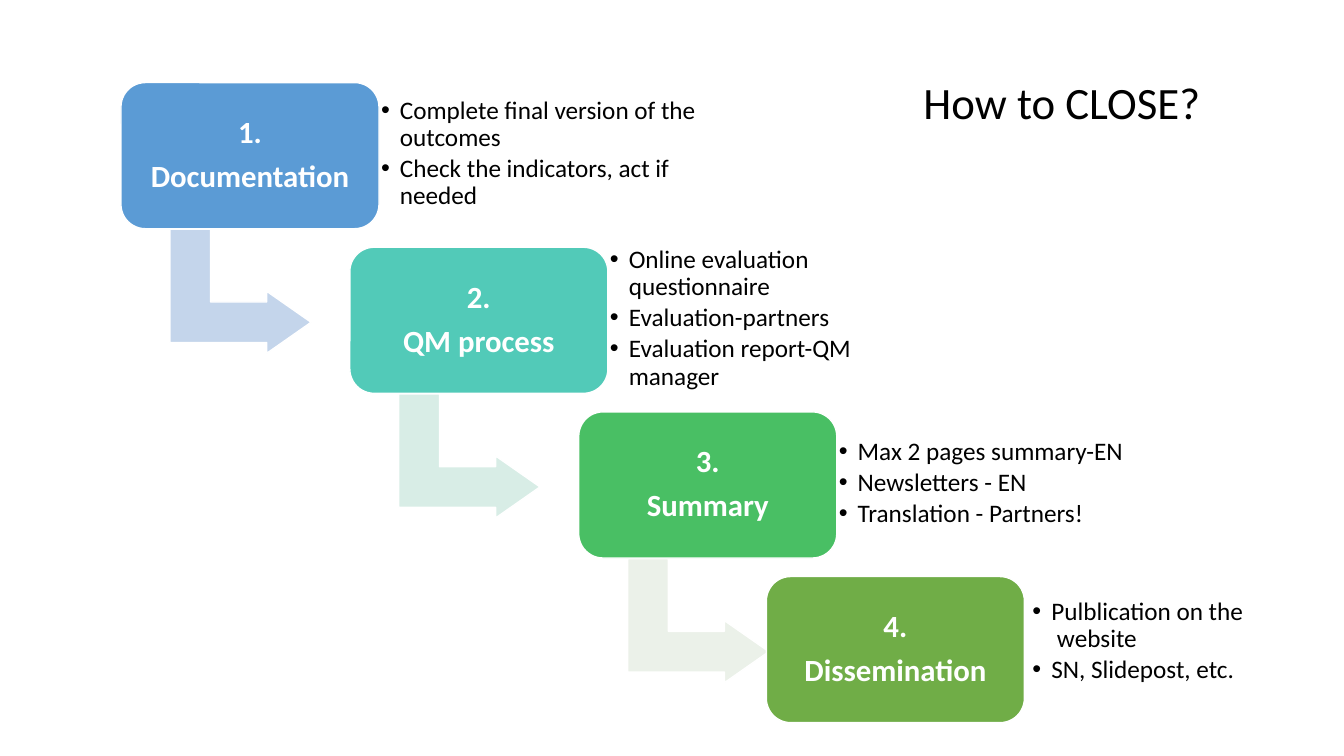
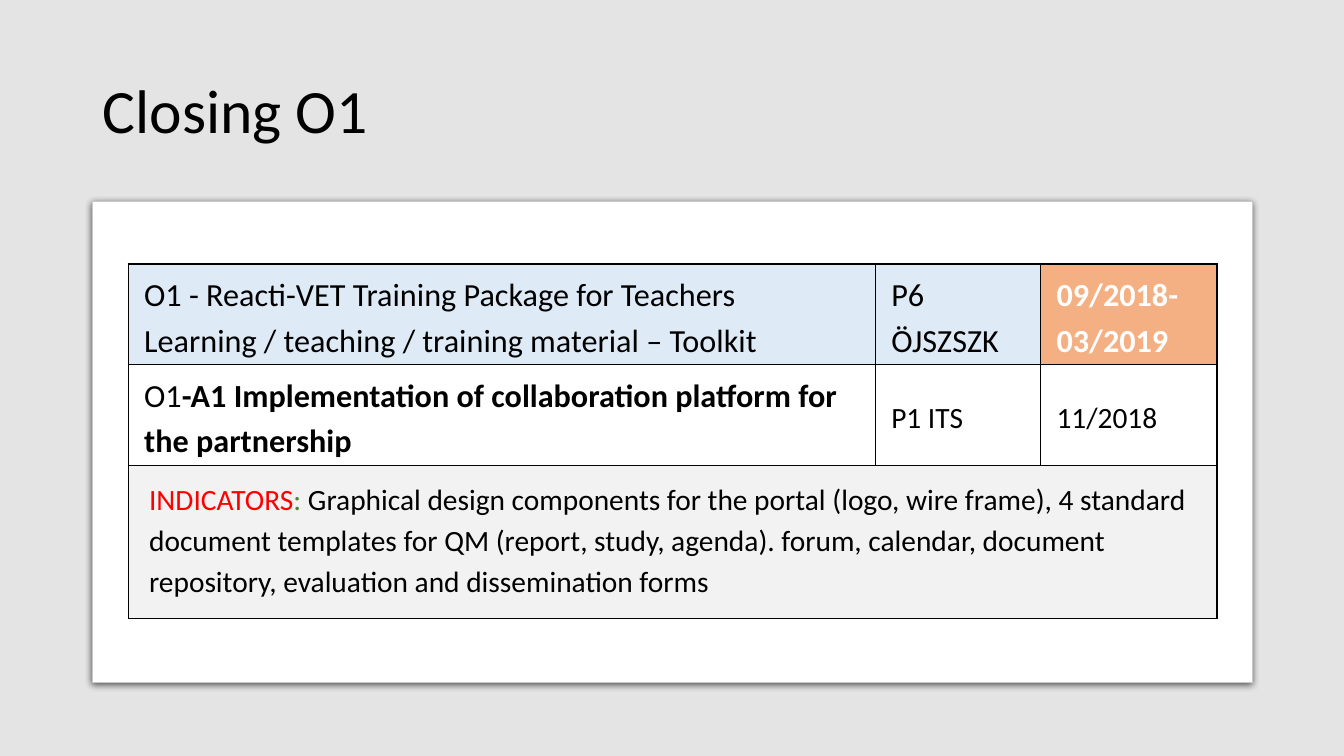
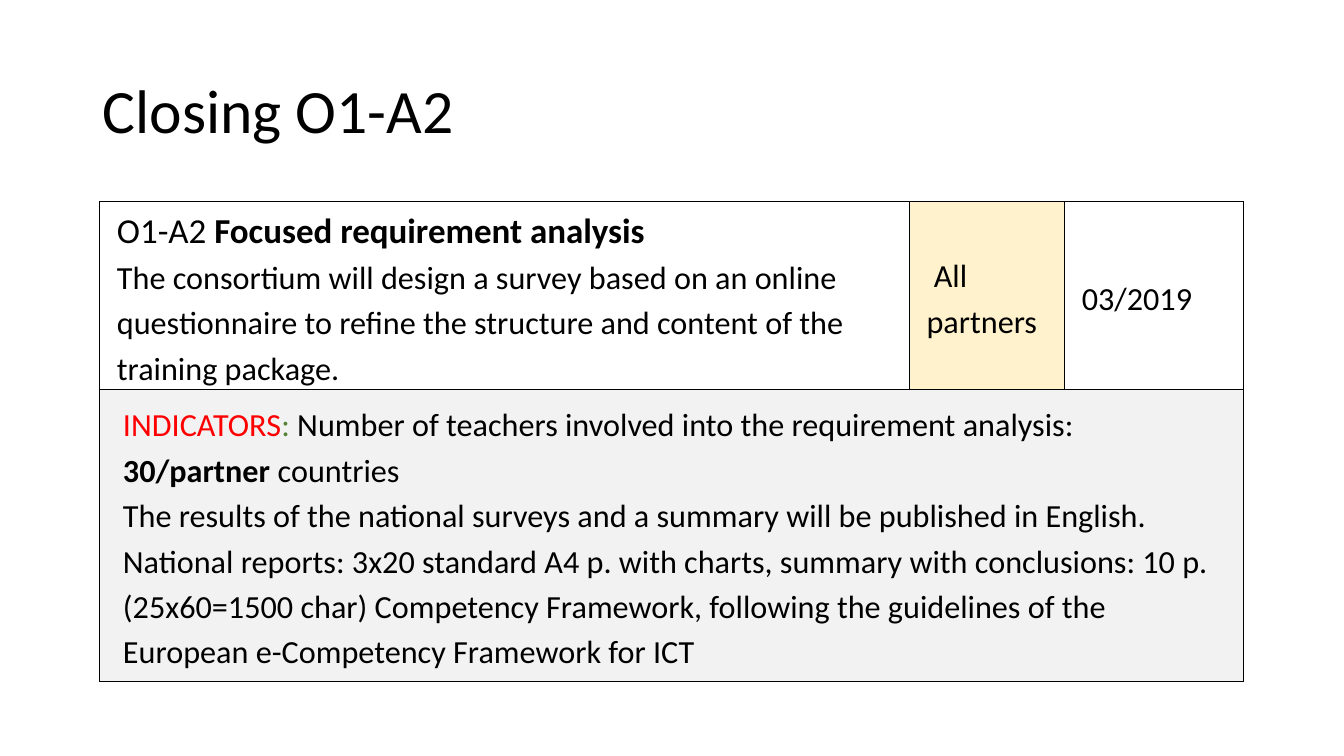
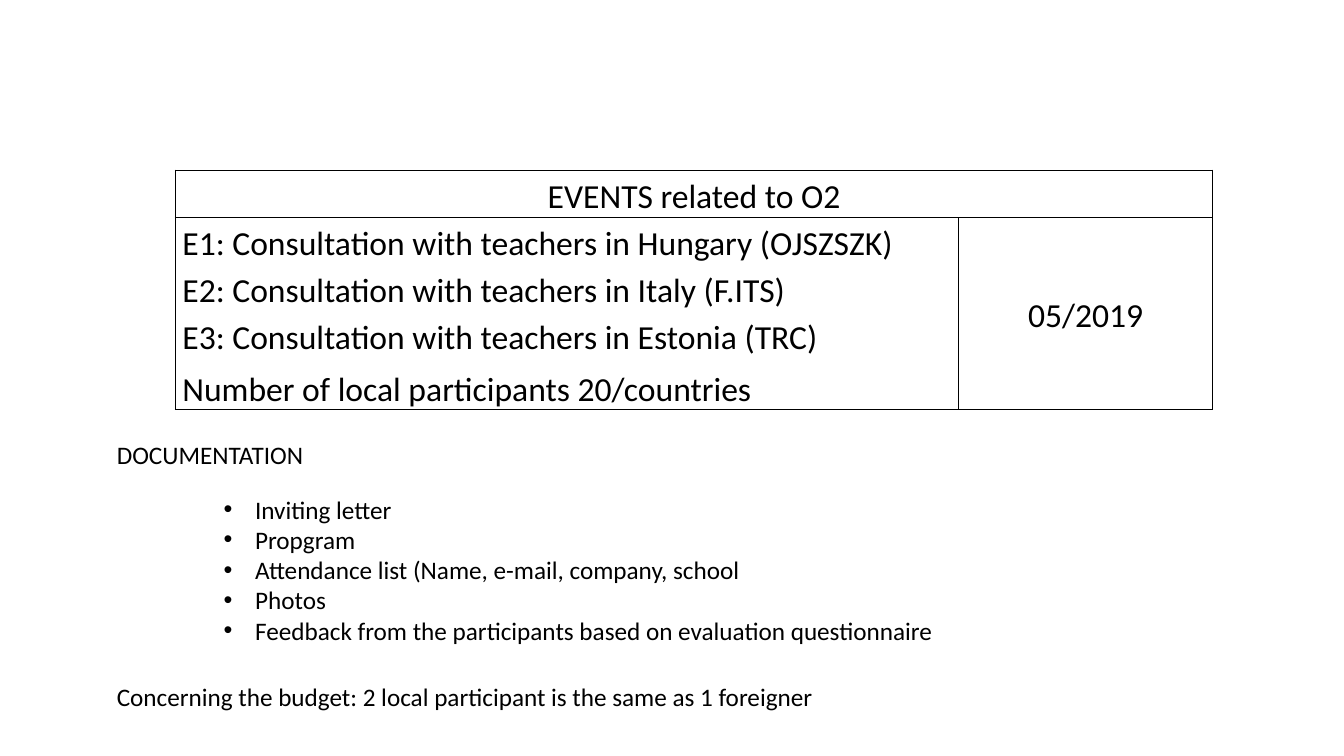
"""Build four slides on closing the project outcomes."""
from dataclasses import dataclass
from typing import NamedTuple

from lxml.etree import SubElement
from pptx import Presentation
from pptx.dml.color import RGBColor
from pptx.enum.shapes import MSO_SHAPE
from pptx.enum.text import MSO_ANCHOR, MSO_AUTO_SIZE, PP_ALIGN
from pptx.oxml.ns import qn
from pptx.util import Inches, Pt

FONT = "Calibri"
BLACK, WHITE, RED, GREEN = "000000", "FFFFFF", "FF0000", "538135"
BACKDROP, CARD_EDGE, PALE_GREY = "D9D9D9", "C8CACA", "F2F2F2"
PALE_BLUE, ORANGE, PALE_YELLOW = "DEEAF6", "F4B083", "FFF2CC"
WIDTH, HEIGHT = Inches(13.33), Inches(7.5)
TEXT_INSETS = (7.2, 3.6, 7.2, 3.6)


class Box(NamedTuple):
    """Left, top, width and height as percent of the slide."""
    x: float
    y: float
    w: float
    h: float


class Run(NamedTuple):
    """Piece of text with its own format."""
    text: str
    color: str | None = None
    bold: bool | None = None
    size: float | None = None


class Para(NamedTuple):
    """Paragraph of runs and its space after in points."""
    runs: tuple[Run, ...]
    after: float = 0


@dataclass
class Step:
    """Stage of the closing process with its notes."""
    name: str
    notes: tuple[str, ...]
    color: str
    x: float
    note: Box
    arrow: str | None = None


@dataclass
class Cell:
    """Table cell with its text and format."""
    paras: tuple[Para, ...]
    size: float
    insets: tuple[float, ...]
    fill: str | None = None
    anchor: MSO_ANCHOR = MSO_ANCHOR.MIDDLE
    align: PP_ALIGN | None = None
    span: int = 1


def rgb(color: str) -> RGBColor:
    """Turn a hex string into a colour."""
    return RGBColor.from_string(color)


def across(share: float) -> int:
    """Turn percent of the slide width into a length."""
    return round(WIDTH * share / 100)


def down(share: float) -> int:
    """Turn percent of the slide height into a length."""
    return round(HEIGHT * share / 100)


def place(box: Box) -> tuple[int, int, int, int]:
    """Turn a box of shares into lengths."""
    return across(box.x), down(box.y), across(box.w), down(box.h)


def plain(*texts: str, after: float = 0) -> tuple[Para, ...]:
    """Make one paragraph from each text."""
    return tuple(Para((Run(text),), after) for text in texts)


def add_bullet(p, indent: float) -> None:
    """Give a paragraph a round bullet with a hanging indent."""
    pPr = p._p.get_or_add_pPr()
    pPr.set("marL", str(Pt(indent)))
    pPr.set("indent", str(-Pt(indent)))
    SubElement(pPr, qn("a:buFont"), typeface="Arial")
    SubElement(pPr, qn("a:buChar"), char="•")


def add_run(p, text: str, *, size: float, color: str, bold: bool) -> None:
    """Add a formatted run, with line breaks at newlines."""
    for i, line in enumerate(text.split("\n")):
        if i:
            p.add_line_break()
        r = p.add_run()
        r.text = line
        r.font.name, r.font.size, r.font.bold = FONT, Pt(size), bold
        r.font.color.rgb = rgb(color)


def write(tf, paras: tuple[Para, ...], *, size: float, color: str = BLACK,
          bold: bool = False, spacing: float = 1.0, indent: float = 0,
          align: PP_ALIGN | None = None) -> None:
    """Fill a text frame with formatted paragraphs."""
    for i, para in enumerate(paras):
        p = tf.add_paragraph() if i else tf.paragraphs[0]
        if indent:
            add_bullet(p, indent)
        p.alignment, p.line_spacing = align or PP_ALIGN.LEFT, spacing
        p.space_before, p.space_after = Pt(0), Pt(para.after)
        for run in para.runs:
            add_run(p, run.text, size=run.size or size, color=run.color or color,
                    bold=bold if run.bold is None else run.bold)


def set_insets(target, insets: tuple[float, ...]) -> None:
    """Set left, top, right and bottom margins in points."""
    (target.margin_left, target.margin_top,
     target.margin_right, target.margin_bottom) = map(Pt, insets)


def add_text(s, box: Box, paras: tuple[Para, ...], *, wrap: bool = True,
             anchor: MSO_ANCHOR = MSO_ANCHOR.TOP,
             insets: tuple[float, ...] = TEXT_INSETS, **style) -> None:
    """Add a text box, which grows with its text when unwrapped."""
    tf = s.shapes.add_textbox(*place(box)).text_frame
    tf.word_wrap, tf.vertical_anchor = wrap, anchor
    if not wrap:
        tf.auto_size = MSO_AUTO_SIZE.SHAPE_TO_FIT_TEXT
    set_insets(tf, insets)
    write(tf, paras, **style)


def add_title(s, text: str) -> None:
    """Add the slide title."""
    add_text(s, Box(6.9, 5.33, 86.27, 19.33), plain(text, after=6), size=44,
             spacing=0.9, anchor=MSO_ANCHOR.MIDDLE)


def add_shape(s, kind: MSO_SHAPE, box: Box, fill: str, *,
              line: str | None = None, width: float = 1,
              adjust: tuple[float, ...] = ()):
    """Add a flat preset shape."""
    sp = s.shapes.add_shape(kind, *place(box))
    sp.shadow.inherit = False
    sp.fill.solid()
    sp.fill.fore_color.rgb = rgb(fill)
    if line:
        sp.line.color.rgb, sp.line.width = rgb(line), Pt(width)
    else:
        sp.line.fill.background()
    for i, value in enumerate(adjust):
        sp.adjustments[i] = value
    return sp


def set_alpha(clr, percent: int) -> None:
    """Set the opacity of a colour element."""
    SubElement(clr, qn("a:alpha"), val=str(percent * 1000))


def add_shadow(sp) -> None:
    """Give a shape a soft shadow below."""
    effects = sp._element.spPr.find(qn("a:effectLst"))
    shadow = SubElement(effects, qn("a:outerShdw"), blurRad=str(Pt(4.5)),
                        dist=str(Pt(1.5)), dir="5400000", rotWithShape="0")
    set_alpha(SubElement(shadow, qn("a:srgbClr"), val=BLACK), 63)


def add_borders(cell) -> None:
    """Draw a thin black line on every side of a cell."""
    tcPr = cell._tc.get_or_add_tcPr()
    for side in "LRTB":
        ln = SubElement(tcPr, qn(f"a:ln{side}"), w=str(Pt(1)))
        SubElement(SubElement(ln, qn("a:solidFill")), qn("a:srgbClr"), val=BLACK)


def add_table(s, x: float, y: float, cols: tuple[float, ...],
              rows: tuple[float, ...], cells: list[list[Cell]]) -> None:
    """Add a bordered table."""
    box = Box(x, y, sum(cols), sum(rows))
    table = s.shapes.add_table(len(rows), len(cols), *place(box)).table
    table.first_row = table.horz_banding = False
    for col, share in zip(table.columns, cols):
        col.width = across(share)
    for row, share in zip(table.rows, rows):
        row.height = down(share)
    for cell in table.iter_cells():
        add_borders(cell)
        cell.fill.background()
    for i, line in enumerate(cells):
        for j, item in enumerate(line):
            cell = table.cell(i, j)
            if item.span > 1:
                cell.merge(table.cell(i, j + item.span - 1))
            if item.fill:
                cell.fill.solid()
                cell.fill.fore_color.rgb = rgb(item.fill)
            cell.vertical_anchor = item.anchor
            set_insets(cell, item.insets)
            write(cell.text_frame, item.paras, size=item.size, spacing=1.15,
                  align=item.align)


def add_step(s, number: int, step: Step) -> None:
    """Draw a stage, its arrow to the next one and its notes."""
    y = 10.93 + 21.78 * (number - 1)
    if step.arrow:
        arrow = add_shape(s, MSO_SHAPE.BENT_UP_ARROW,
                          Box(step.x + 4.28, y + 18.27, 9.23, 18.67), step.arrow,
                          line=WHITE, adjust=(0.328, 0.25, 0.358))
        arrow.rotation = 90
    sp = add_shape(s, MSO_SHAPE.ROUNDED_RECTANGLE, Box(step.x, y, 19.2, 19.33),
                   step.color, line=WHITE, adjust=(0.167,))
    tf = sp.text_frame
    tf.word_wrap, tf.vertical_anchor = True, MSO_ANCHOR.MIDDLE
    set_insets(tf, (6.5,) * 4)
    write(tf, plain(f"{number}.", step.name, after=7.7), size=22, color=WHITE,
          bold=True, spacing=0.9, align=PP_ALIGN.CENTER)
    dx, dy, w, h = step.note
    add_text(s, Box(step.x + dx, y + dy, w, h), plain(*step.notes, after=2.7),
             size=18, spacing=0.9, indent=13.5, anchor=MSO_ANCHOR.MIDDLE,
             insets=(5,) * 4)


def build_process(s) -> None:
    """Draw the staircase of closing steps."""
    left, shift, note = 9, 17.03, Box(18.83, 1.65, 24.83, 15.6)
    steps = (
        Step("Documentation",
             ("Complete final version of the outcomes",
              "Check the indicators, act if needed"),
             "5B9BD5", left, note, "C4D5EB"),
        Step("QM process",
             ("Online evaluation questionnaire", "Evaluation-partners",
              "Evaluation report-QM manager"),
             "52CAB8", left + shift, note, "D8EDE6"),
        Step("Summary",
             ("Max 2 pages summary-EN", "Newsletters - EN",
              "Translation - Partners!"),
             "49BF64", left + 2 * shift, note, "EBF1E9"),
        Step("Dissemination",
             ("Pulblication on the\n website", "SN, Slidepost, etc."),
             "70AD47", 57.02, Box(19.28, 0.8, 18.6, 15.6)),
    )
    for number, step in enumerate(steps, 1):
        add_step(s, number, step)
    add_text(s, Box(67.97, 9.2, 22.36, 8.53), plain("How to CLOSE?"), size=32,
             wrap=False)


def build_outcome(s) -> None:
    """Draw the outcome table on a card."""
    backdrop = add_shape(s, MSO_SHAPE.RECTANGLE, Box(0, 0, 100, 100), BACKDROP)
    set_alpha(backdrop._element.spPr.find(f".//{qn('a:srgbClr')}"), 70)
    add_title(s, "Closing O1")
    add_shadow(add_shape(s, MSO_SHAPE.RECTANGLE, Box(6.9, 26.67, 86.27, 63.6),
                         WHITE, line=CARD_EDGE, width=0.75))
    insets = (11.5, 1.4, 11.5, 0)
    dates = tuple(Para((Run(d, WHITE, True),)) for d in ("09/2018-", "03/2019"))
    activity = Para((Run("O1"), Run("-A1 Implementation of collaboration platform "
                                    "for the partnership", bold=True)))
    indicators = Para((
        Run("INDICATORS", RED), Run(": ", GREEN),
        Run("Graphical design components for the portal (logo, wire frame), "
            "4 standard document templates for QM (report, study, agenda). forum, "
            "calendar, document repository, evaluation and dissemination forms")), 3)
    add_table(s, 9.53, 34.93, (55.59, 12.3, 13.13), (13.33, 13.33, 20.27), [
        [Cell(plain("O1 - Reacti-VET Training Package for Teachers",
                    "Learning / teaching / training material – Toolkit"),
              23, insets, PALE_BLUE),
         Cell(plain("P6 ÖJSZSZK"), 23, insets, PALE_BLUE),
         Cell(dates, 23, insets, ORANGE)],
        [Cell((activity,), 23, insets),
         Cell(plain("P1 ITS", after=3), 21, insets),
         Cell(plain("11/2018", after=3), 21, insets)],
        [Cell((indicators,), 21, (15, 8, 15, 8), PALE_GREY, MSO_ANCHOR.TOP, span=3)],
    ])


def build_activity(s) -> None:
    """Draw the requirement analysis table."""
    add_title(s, "Closing O1-A2")
    insets = (12.2, 1.4, 12.2, 0)
    survey = (
        Para((Run("O1-A2 ", size=25),
              Run("Focused requirement analysis", bold=True, size=25))),
        *plain("The consortium will design a survey based on an online questionnaire "
               "to refine the structure and content of the training package."))
    indicators = (
        Para((Run("INDICATORS", RED), Run(":", GREEN),
              Run(" Number of teachers involved into the requirement analysis: "),
              Run("30/partner ", bold=True), Run("countries"))),
        *plain("The results of the national surveys and a summary will be published "
               "in English."),
        *plain("National reports: 3x20 standard A4 p. with charts, summary with "
               "conclusions: 10 p. (25x60=1500 char) Competency Framework, following "
               "the guidelines of the European e-Competency Framework for ICT",
               after=3))
    add_table(s, 7.43, 26.67, (60.24, 11.55, 13.28), (24.8, 38.67), [
        [Cell(survey, 23, insets, anchor=MSO_ANCHOR.TOP),
         Cell(plain(" All partners", after=3), 23, insets, PALE_YELLOW),
         Cell(plain("03/2019", after=3), 23, insets)],
        [Cell(indicators, 23, (16.5, 8, 16.5, 8), PALE_GREY, MSO_ANCHOR.TOP, span=3)],
    ])


def build_events(s) -> None:
    """Draw the events table and the list of documents."""
    insets = (5, 0, 5, 0)
    events = (
        *plain("E1: Consultation with teachers in Hungary (OJSZSZK)",
               "E2: Consultation with teachers in Italy (F.ITS)"),
        *plain("E3: Consultation with teachers in Estonia (TRC)",
               "Number of local participants 20/countries", after=3))
    add_table(s, 13.05, 22.53, (58.29, 18.9), (6.27, 25.33), [
        [Cell(plain("EVENTS related to O2"), 24, insets, anchor=MSO_ANCHOR.TOP,
              align=PP_ALIGN.CENTER, span=2)],
        [Cell(events, 24, insets, anchor=MSO_ANCHOR.TOP),
         Cell(plain("05/2019", after=3), 24, insets, align=PP_ALIGN.CENTER)],
    ])
    add_text(s, Box(7.95, 57.47, 15.98, 5.33), plain("DOCUMENTATION"), size=18,
             wrap=False)
    documents = ("Inviting letter", "Propgram",
                 "Attendance list (Name, e-mail, company, school", "Photos",
                 "Feedback from the participants based on evaluation questionnaire")
    add_text(s, Box(15.9, 64.67, 54.91, 25.6), plain(*documents), size=18,
             indent=22.5, wrap=False)
    add_text(s, Box(7.95, 89.47, 54.01, 5.33),
             plain("Concerning the budget: 2 local participant is the same as "
                   "1 foreigner"), size=18, wrap=False)


def main() -> None:
    """Build and save the presentation."""
    prs = Presentation()
    prs.slide_width, prs.slide_height = WIDTH, HEIGHT
    for build in (build_process, build_outcome, build_activity, build_events):
        build(prs.slides.add_slide(prs.slide_layouts[6]))
    prs.save("out.pptx")


if __name__ == "__main__":
    main()
